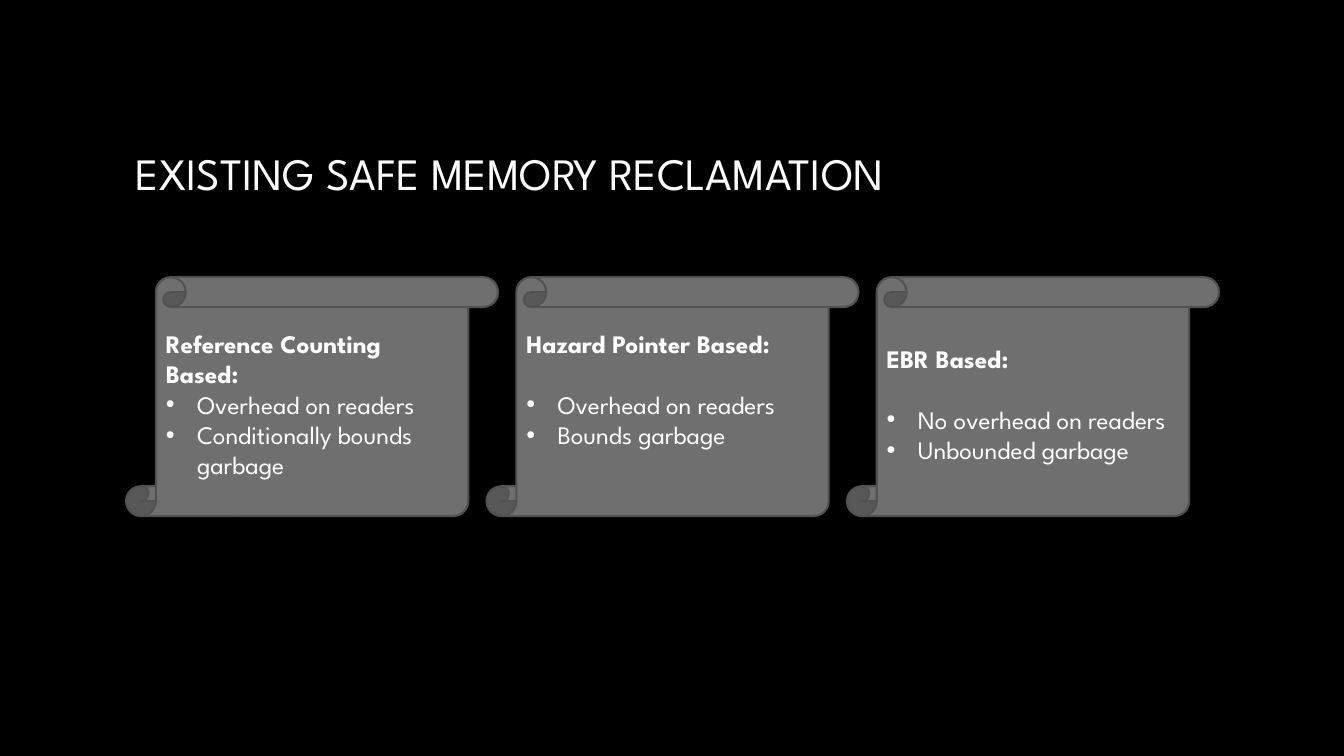
import pptx
import pptx.util
import pptx.dml.color
import pptx.enum.shapes
import pptx.enum.text
import pptx.oxml.ns
from lxml import etree

Inches, Pt = pptx.util.Inches, pptx.util.Pt
RGB = pptx.dml.color.RGBColor.from_string
ALIGN = pptx.enum.text.PP_ALIGN
MIDDLE = pptx.enum.text.MSO_ANCHOR.MIDDLE
COLORS = {"back": "000000", "text": "FFFFFF", "card": "6F6F6F", "edge": "525252"}
LINE = 21.6  # height in points of one line of card text


def style(para, text, size, bold=False):
    para.text = text
    para.alignment = ALIGN.LEFT
    para.font.name = "League Spartan"
    para.font.size = Pt(size)
    para.font.bold = bold
    para.font.color.rgb = RGB(COLORS["text"])


def bullet(para):
    props = para._p.get_or_add_pPr()
    props.set("marL", str(Inches(0.31)))
    props.set("indent", str(-Inches(0.31)))
    for tag, key, value in (("a:buFont", "typeface", "Arial"), ("a:buChar", "char", "•")):
        etree.SubElement(props, pptx.oxml.ns.qn(tag)).set(key, value)


deck = pptx.Presentation()
deck.slide_width, deck.slide_height = Inches(13.33), Inches(7.5)
slide = deck.slides.add_slide(deck.slide_layouts[6])
slide.background.fill.solid()
slide.background.fill.fore_color.rgb = RGB(COLORS["back"])

title = slide.shapes.add_textbox(Inches(1.25), Inches(0.67), Inches(10.83), Inches(2.08))
title.text_frame.word_wrap = True
title.text_frame.vertical_anchor = MIDDLE
style(title.text_frame.paragraphs[0], "EXISTING SAFE MEMORY RECLAMATION", 32)

# heading, bullets, lines of space below the heading, lines of space at the foot
cards = [
    ("Reference Counting Based:", ["Overhead on readers", "Conditionally bounds garbage"], 0, 0),
    ("Hazard Pointer Based:", ["Overhead on readers", "Bounds garbage"], 1, 1),
    ("EBR Based:", ["No overhead on readers", "Unbounded garbage"], 1, 0),
]
for i, (head, points, gap, foot) in enumerate(cards):
    card = slide.shapes.add_shape(
        pptx.enum.shapes.MSO_SHAPE.VERTICAL_SCROLL,
        Inches(1.25 + 3.575 * i), Inches(2.75), Inches(3.69), Inches(2.37))
    card.shadow.inherit = False
    card.fill.solid()
    card.fill.fore_color.rgb = RGB(COLORS["card"])
    card.line.color.rgb = RGB(COLORS["edge"])
    card.line.width = Pt(1.5)

    frame = card.text_frame
    frame.word_wrap = True
    frame.vertical_anchor = MIDDLE
    frame.margin_bottom = Inches(0.05) + Pt(LINE * foot)
    top = frame.paragraphs[0]
    style(top, head, 18, bold=True)
    top.space_after = Pt(LINE * gap)
    for point in points:
        para = frame.add_paragraph()
        style(para, point, 18)
        bullet(para)

deck.save("out.pptx")
